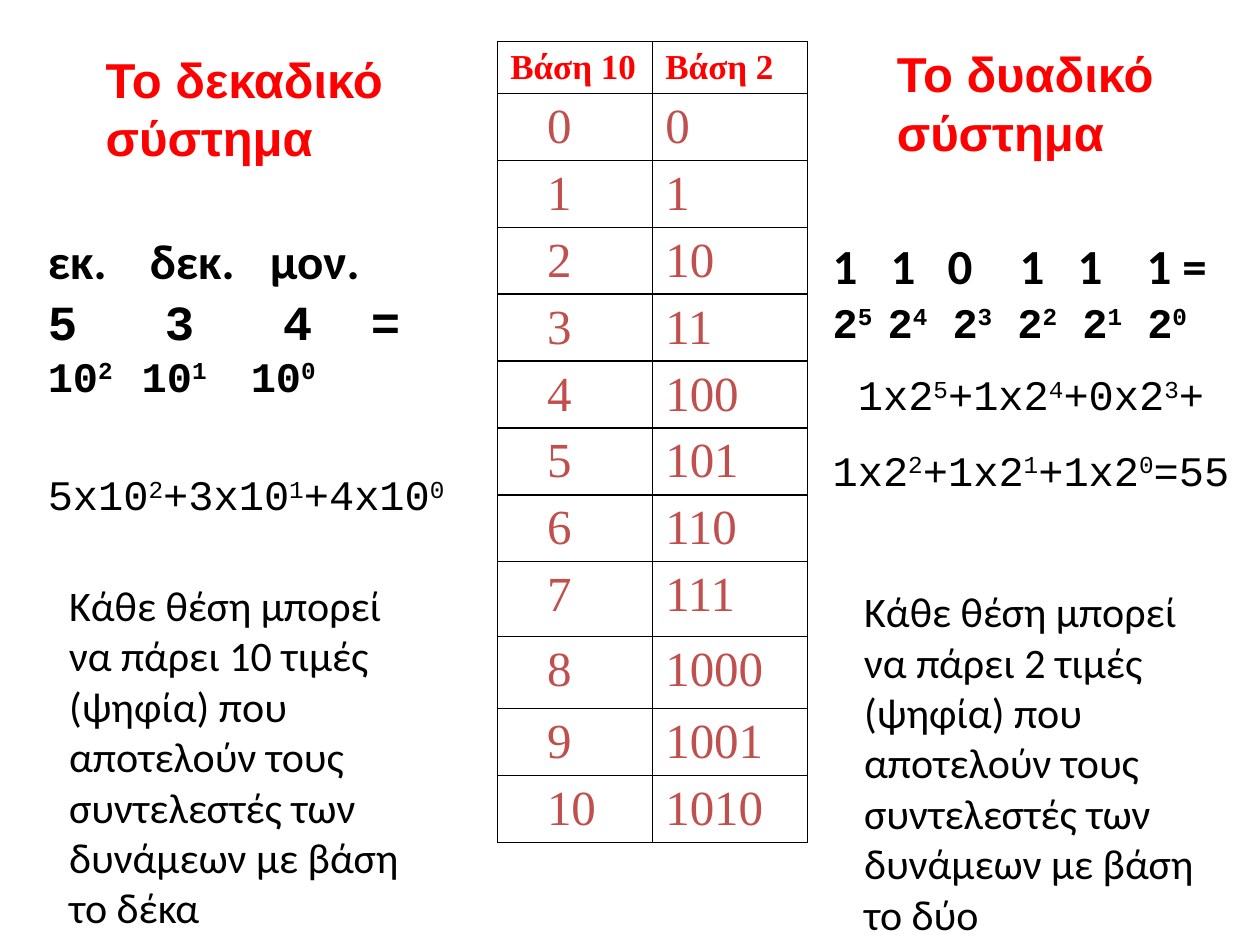
from lxml import etree
from pptx import Presentation
from pptx.dml.color import RGBColor
from pptx.enum.text import MSO_AUTO_SIZE
from pptx.oxml.ns import qn
from pptx.util import Pt

GROW = MSO_AUTO_SIZE.SHAPE_TO_FIT_TEXT
RED = RGBColor(0xFF, 0x00, 0x00)
BRICK = RGBColor(0xC0, 0x50, 0x4D)
BLACK = RGBColor(0x00, 0x00, 0x00)
SANS, BODY, MONO, SERIF = "Arial", "Calibri", "Courier New", "Times New Roman"

HEADERS = ["Βάση 10", "Βάση 2"]
NUMBERS = range(11)
ROW_H = 38.2
TALL_ROWS = {7: 42.9, 8: 41.1}
HEADER_H = 29.7
TABLE_LEFT, TABLE_TOP, COL_W = 284.4, 23.8, 88.6
DIGIT_INDENT = 28.2

TITLES = [
    ("Το δεκαδικό σύστημα", (53.3, 24.5, 183.6, 74.2), 0),
    ("Το δυαδικό σύστημα", (490.3, 21.6, 182.2, 74.2), 15.1),
]
RULE = "Κάθε θέση μπορεί να πάρει {} τιμές (ψηφία) που αποτελούν τους συντελεστές των δυνάμεων με βάση το {}"
RULES = [
    (RULE.format(10, "δέκα"), (32.4, 327.6, 208.1, 208.8)),
    (RULE.format(2, "δύο"), (486.7, 331.2, 208.1, 208.8)),
]
EXPANSIONS = [
    ((20.2, 137.5, 251.3, 164.9), [
        dict(text="εκ.\tδεκ.\tμον.", size=28, bold=True, line=0.7, tabs=[58.3, 126.9]),
        dict(text="5\t3\t4\t=", size=28, font=MONO, bold=True, line=0.5, before=16.8,
             tabs=[66.9, 134.3, 184.6]),
        dict(text="10^2\t10^1\t10^0", size=24, font=MONO, bold=True, line=0.5, before=14.4,
             tabs=[53.7, 116]),
        dict(text="5x10^2+3x10^1+4x10^0", size=24, font=MONO, before=41),
    ]),
    ((468.7, 140.4, 251.3, 145.4), [
        dict(text="1\t1\t0\t1\t1\t1 =", size=28, bold=True, line=0.7,
             tabs=[33.1, 65.7, 106.9, 140, 179.4]),
        dict(text="2^5\t2^4\t2^3\t2^2\t2^1\t2^0", size=24, font=MONO, bold=True, line=0.5,
             before=14.4, tabs=[31.4 + 37.1 * i for i in range(5)]),
        dict(text="1x2^5+1x2^4+0x2^3+", size=24, font=MONO, before=14.4, indent=14.4),
        dict(text="1x2^2+1x2^1+1x2^0=55", size=24, font=MONO, before=14.4),
    ]),
]


def add_run(p, text, size, font, color, bold, raised=False):
    r = p.add_run()
    r.text = text
    r.font.size = Pt(size)
    r.font.name = font
    r.font.bold = bold
    r.font.color.rgb = color
    if raised:
        r.font._element.set("baseline", "30000")


def write(p, text, size, font=BODY, color=BLACK, bold=False, line=None, before=0, tabs=(), indent=0):
    if line:
        p.line_spacing = line
    if before:
        p.space_before = Pt(before)
    pPr = p._p.get_or_add_pPr()
    if indent:
        pPr.set("marL", str(Pt(indent)))
        pPr.set("indent", "0")
    if tabs:
        tab_list = etree.SubElement(pPr, qn("a:tabLst"))
        for pos in tabs:
            etree.SubElement(tab_list, qn("a:tab"), pos=str(Pt(pos)), algn="l")
    base, *powers = text.split("^")
    add_run(p, base, size, font, color, bold)
    for part in powers:
        add_run(p, part[0], size, font, color, bold, raised=True)
        if part[1:]:
            add_run(p, part[1:], size, font, color, bold)


def add_text(s, box, paragraphs):
    tf = s.shapes.add_textbox(*map(Pt, box)).text_frame
    tf.word_wrap = True
    tf.auto_size = GROW
    for i, item in enumerate(paragraphs):
        write(tf.add_paragraph() if i else tf.paragraphs[0], **item)


def set_borders(cell):
    tcPr = cell._tc.get_or_add_tcPr()
    for i, side in enumerate(("lnL", "lnR", "lnT", "lnB")):
        ln = etree.Element(qn(f"a:{side}"), w=str(Pt(1)))
        fill = etree.SubElement(ln, qn("a:solidFill"))
        etree.SubElement(fill, qn("a:srgbClr"), val=str(BLACK))
        tcPr.insert(i, ln)


def add_number_table(s):
    rows = [HEADERS] + [[str(n), f"{n:b}"] for n in NUMBERS]
    heights = [HEADER_H] + [TALL_ROWS.get(n, ROW_H) for n in NUMBERS]
    frame = s.shapes.add_table(len(rows), 2, Pt(TABLE_LEFT), Pt(TABLE_TOP),
                               Pt(2 * COL_W), Pt(sum(heights)))
    table = frame.table
    table.first_row = table.horz_banding = False
    for col in table.columns:
        col.width = Pt(COL_W)
    for i, (row, height) in enumerate(zip(rows, heights)):
        table.rows[i].height = Pt(height)
        for j, text in enumerate(row):
            cell = table.cell(i, j)
            cell.fill.background()
            set_borders(cell)
            if i and j == 0:
                cell.margin_left = Pt(DIGIT_INDENT)
            write(cell.text_frame.paragraphs[0], text, 28 if i else 20, SERIF,
                  BRICK if i else RED, bold=i == 0)


prs = Presentation()
prs.slide_width, prs.slide_height = Pt(720), Pt(540)
s = prs.slides.add_slide(prs.slide_layouts[6])
add_number_table(s)
for text, box, indent in TITLES:
    add_text(s, box, [dict(text=text, size=28, font=SANS, color=RED, bold=True, indent=indent)])
for box, paragraphs in EXPANSIONS:
    add_text(s, box, paragraphs)
for text, box in RULES:
    add_text(s, box, [dict(text=text, size=24)])
prs.save("out.pptx")
